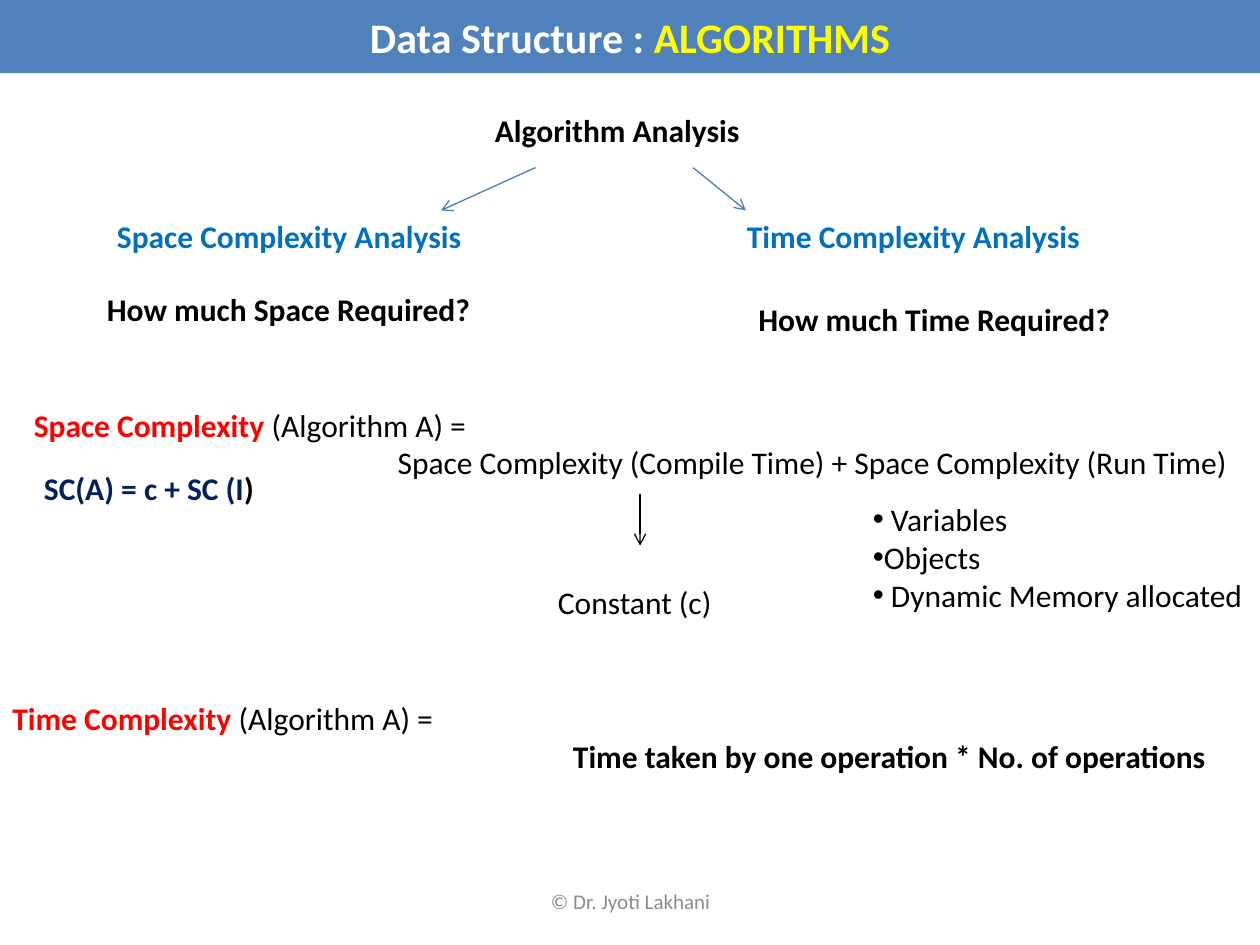
"""Build the slide on space and time complexity in algorithm analysis."""
import lxml.etree
import pptx
import pptx.dml.color
import pptx.enum.shapes
import pptx.enum.text
import pptx.oxml
import pptx.oxml.ns
import pptx.util

Inches = pptx.util.Inches
Align = pptx.enum.text.PP_ALIGN
Anchor = pptx.enum.text.MSO_ANCHOR
qn = pptx.oxml.ns.qn
BLACK, RED, BLUE, NAVY = "000000", "FF0000", "0070C0", "002060"


def color(value):
    """Turn a hex string into a colour."""
    return pptx.dml.color.RGBColor.from_string(value)


def write(frame, paragraphs, size=18, align=Align.LEFT, wrap=True):
    """Fill a frame with paragraphs of (text, colour, bold) runs."""
    frame.word_wrap = wrap
    for index, runs in enumerate(paragraphs):
        paragraph = frame.add_paragraph() if index else frame.paragraphs[0]
        paragraph.alignment = align
        paragraph.font.size = pptx.util.Pt(size)
        paragraph.font.name = "Calibri"
        for text, hue, bold in runs:
            run = paragraph.add_run()
            run.text = text
            run.font.color.rgb = color(hue)
            run.font.bold = bold


presentation = pptx.Presentation()
presentation.slide_width = Inches(10)
presentation.slide_height = Inches(7.5)
slide = presentation.slides.add_slide(presentation.slide_layouts[6])
shapes = slide.shapes

banner = shapes.add_shape(
    pptx.enum.shapes.MSO_SHAPE.RECTANGLE, 0, 0, Inches(10), Inches(0.58))
banner.shadow.inherit = False
banner.fill.solid()
banner.fill.fore_color.rgb = color("4F81BD")
banner.line.fill.background()
banner.text_frame.vertical_anchor = Anchor.MIDDLE
write(banner.text_frame,
      [[("Data Structure : ", "FFFFFF", True), ("ALGORITHMS", "FFFF00", True)]],
      size=24, align=Align.CENTER)

labels = [
    (3.83, 0.83, 2.16, [("Algorithm Analysis", BLACK, True)]),
    (0.83, 1.67, 2.96, [("Space Complexity Analysis", BLUE, True)]),
    (5.83, 1.67, 2.86, [("Time Complexity Analysis", BLUE, True)]),
    (0.75, 2.25, 3.11, [("How much Space Required?", BLACK, True)]),
    (5.92, 2.33, 3.02, [("How much Time Required?", BLACK, True)]),
    (4.33, 4.58, 1.46, [("Constant (c)", BLACK, False)]),
    (0.25, 3.67, 1.89, [("SC(A) = c + SC (I", NAVY, True), (")", BLACK, True)]),
]
for left, top, width, runs in labels:
    label = shapes.add_textbox(Inches(left), Inches(top), Inches(width), Inches(0.4))
    write(label.text_frame, [runs], wrap=False)

formulas = [
    (0.17, 3.17, "Space Complexity ",
     " Space Complexity (Compile Time) + Space Complexity (Run Time)", False),
    (0, 5.5, "Time Complexity ",
     " Time taken by one operation * No. of operations", True),
]
for left, top, measure, expression, bold in formulas:
    formula = shapes.add_textbox(Inches(left), Inches(top), Inches(9.67), Inches(0.71))
    write(formula.text_frame,
          [[(measure, RED, True), ("(Algorithm A) =", BLACK, False)],
           [(expression, BLACK, bold)]])
    formula.text_frame.paragraphs[1].alignment = Align.RIGHT

run_time = shapes.add_textbox(Inches(6.83), Inches(3.92), Inches(3.17), Inches(1.01))
items = [" Variables", "Objects", " Dynamic Memory allocated"]
write(run_time.text_frame, [[(item, BLACK, False)] for item in items])
for paragraph in run_time.text_frame.paragraphs:
    properties = paragraph._p.get_or_add_pPr()
    bullet_font = lxml.etree.Element(qn("a:buFont"), typeface="Arial")
    bullet = lxml.etree.Element(qn("a:buChar"), char="•")
    properties.insert(0, bullet_font)
    properties.insert(1, bullet)

arrows = [
    (4.25, 1.33, 3.5, 1.67, "4B7EBC"),
    (5.5, 1.33, 5.92, 1.67, "4B7EBC"),
    (5.08, 3.92, 5.08, 4.33, BLACK),
]
for x1, y1, x2, y2, hue in arrows:
    arrow = shapes.add_connector(
        pptx.enum.shapes.MSO_CONNECTOR.STRAIGHT,
        Inches(x1), Inches(y1), Inches(x2), Inches(y2))
    arrow.line.color.rgb = color(hue)
    arrow.line.width = pptx.util.Pt(0.75)
    lxml.etree.SubElement(arrow.line._get_or_add_ln(), qn("a:tailEnd"), type="arrow")
    lxml.etree.SubElement(arrow._element.spPr, qn("a:effectLst"))

footer = shapes.add_textbox(Inches(3.42), Inches(6.95), Inches(3.17), Inches(0.4))
footer.text_frame.vertical_anchor = Anchor.MIDDLE
write(footer.text_frame, [[("© Dr. Jyoti Lakhani", "8C8C8C", False)]],
      size=12, align=Align.CENTER)

presentation.save("out.pptx")
